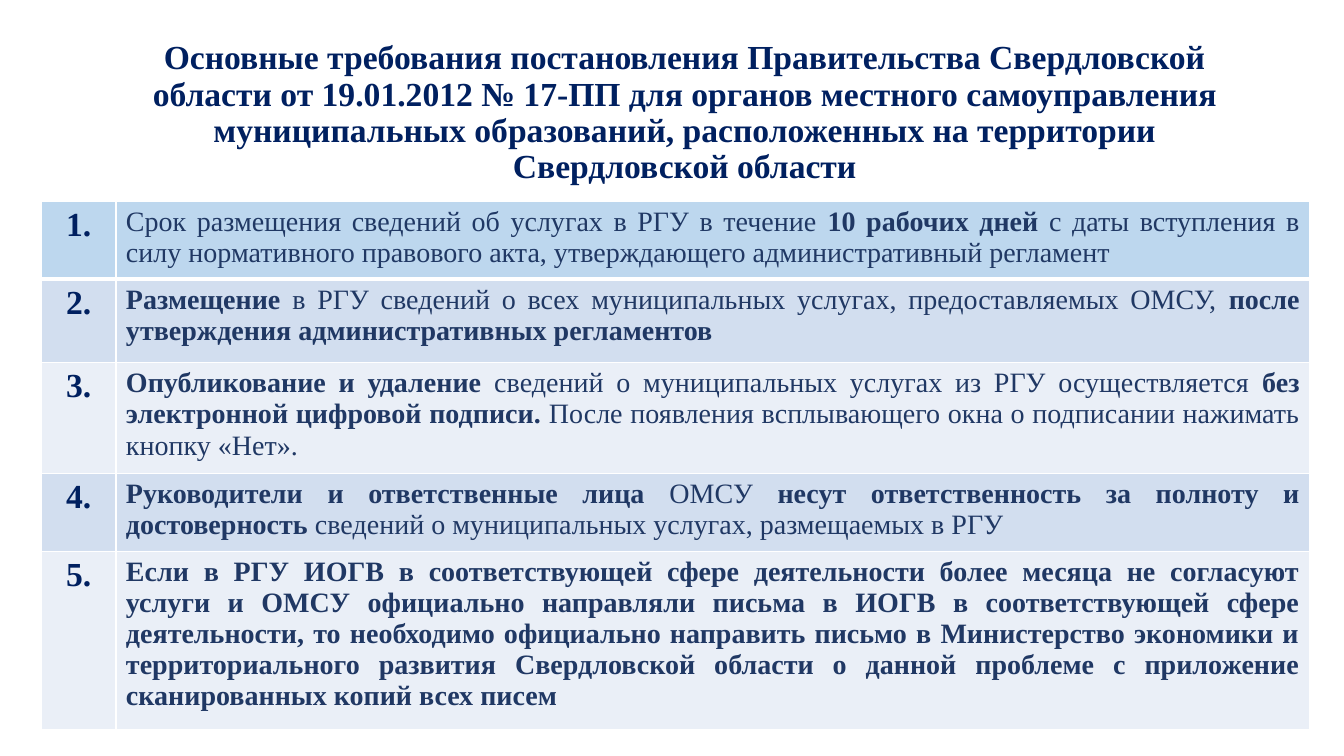
from dataclasses import dataclass

from lxml.etree import SubElement
from pptx import Presentation
from pptx.dml.color import RGBColor
from pptx.enum.text import MSO_ANCHOR, MSO_AUTO_SIZE, PP_ALIGN
from pptx.oxml.ns import qn
from pptx.slide import Slide
from pptx.table import _Cell
from pptx.text.text import _Paragraph
from pptx.util import Emu, Pt

PX = 9144  # 100 px to the inch
FONT = "Times New Roman"
NAVY = RGBColor(0x00, 0x20, 0x60)
DARK_BLUE = RGBColor(0x20, 0x38, 0x64)
SKY = RGBColor(0xBD, 0xD7, 0xEE)
BLUE_BAND = RGBColor(0xD2, 0xDE, 0xEF)
PALE_BAND = RGBColor(0xEA, 0xEF, 0xF7)
WHITE = RGBColor(0xFF, 0xFF, 0xFF)

TITLE = (
    "Основные требования постановления Правительства Свердловской области "
    "от 19.01.2012 № 17-ПП для органов местного самоуправления муниципальных "
    "образований, расположенных на территории Свердловской области"
)
COLUMN_WIDTHS = (74, 1184)


@dataclass(frozen=True)
class Requirement:
    """A table row; asterisks in the text enclose its bold parts."""

    height: int
    fill: RGBColor
    text: str


REQUIREMENTS = (
    Requirement(77, SKY,
                "Срок размещения сведений об услугах в РГУ в течение* 10 рабочих дней *"
                "с даты вступления в силу нормативного правового акта, утверждающего "
                "административный регламент"),
    Requirement(83, BLUE_BAND,
                "*Размещение* в РГУ сведений о всех муниципальных услугах, "
                "предоставляемых ОМСУ, *после утверждения административных регламентов*"),
    Requirement(110, PALE_BAND,
                "*Опубликование и удаление *сведений о муниципальных услугах из РГУ "
                "осуществляется *без электронной цифровой подписи.* После появления "
                "всплывающего окна о подписании нажимать кнопку «Нет»."),
    Requirement(77, BLUE_BAND,
                "*Руководители и ответственные лица* ОМСУ *несут ответственность за "
                "полноту и достоверность *сведений о муниципальных услугах, "
                "размещаемых в РГУ"),
    Requirement(177, PALE_BAND,
                "*Если в РГУ ИОГВ в соответствующей сфере деятельности более месяца не "
                "согласуют услуги и ОМСУ официально направляли письма в ИОГВ в "
                "соответствующей сфере деятельности, то необходимо официально направить "
                "письмо в Министерство экономики и территориального развития "
                "Свердловской области о данной проблеме с приложение сканированных "
                "копий всех писем*"),
)


def px(n: int) -> Emu:
    return Emu(n * PX)


def set_font(p: _Paragraph, size: int, color: RGBColor, align: PP_ALIGN) -> None:
    p.alignment = align
    p.font.name = FONT
    p.font.size = Pt(size)
    p.font.color.rgb = color


def write_marked(p: _Paragraph, text: str) -> None:
    """Add runs, making the parts between asterisks bold."""
    for i, part in enumerate(text.split("*")):
        if part:
            r = p.add_run()
            r.text = part
            r.font.bold = i % 2 == 1


def set_borders(cell: _Cell, top: int, bottom: int) -> None:
    """Draw white borders; widths are in points."""
    tc_pr = cell._tc.get_or_add_tcPr()
    for tag, width in (("lnL", 1), ("lnR", 1), ("lnT", top), ("lnB", bottom)):
        ln = SubElement(tc_pr, qn(f"a:{tag}"), w=str(Pt(width)))
        fill = SubElement(ln, qn("a:solidFill"))
        SubElement(fill, qn("a:srgbClr"), val=str(WHITE))


def add_title(s: Slide) -> None:
    title = s.shapes.title
    title.left, title.top, title.width, title.height = map(px, (104, 40, 1150, 145))
    tf = title.text_frame
    tf.text = TITLE
    tf.word_wrap = True
    tf.auto_size = MSO_AUTO_SIZE.NONE
    tf.vertical_anchor = MSO_ANCHOR.MIDDLE
    p = tf.paragraphs[0]
    set_font(p, 24, NAVY, PP_ALIGN.CENTER)
    p.font.bold = True
    p.line_spacing = 0.9


def add_requirements(s: Slide) -> None:
    height = sum(req.height for req in REQUIREMENTS)
    table = s.shapes.add_table(
        len(REQUIREMENTS), len(COLUMN_WIDTHS),
        px(41), px(200), px(sum(COLUMN_WIDTHS)), px(height),
    ).table
    for column, width in zip(table.columns, COLUMN_WIDTHS):
        column.width = px(width)
    for i, req in enumerate(REQUIREMENTS):
        row = table.rows[i]
        row.height = px(req.height)
        for cell in row.cells:
            set_borders(cell, top=3 if i == 1 else 1, bottom=3 if i == 0 else 1)
            cell.fill.solid()
            cell.fill.fore_color.rgb = req.fill
        number, text = (cell.text_frame.paragraphs[0] for cell in row.cells)
        write_marked(number, f"*{i + 1}.*")
        set_font(number, 24, NAVY, PP_ALIGN.CENTER)
        write_marked(text, req.text)
        set_font(text, 20, DARK_BLUE, PP_ALIGN.JUSTIFY)


def main() -> None:
    prs = Presentation()
    prs.slide_width, prs.slide_height = px(1333), px(750)
    s = prs.slides.add_slide(prs.slide_layouts[5])
    add_title(s)
    add_requirements(s)
    prs.save("out.pptx")


if __name__ == "__main__":
    main()
